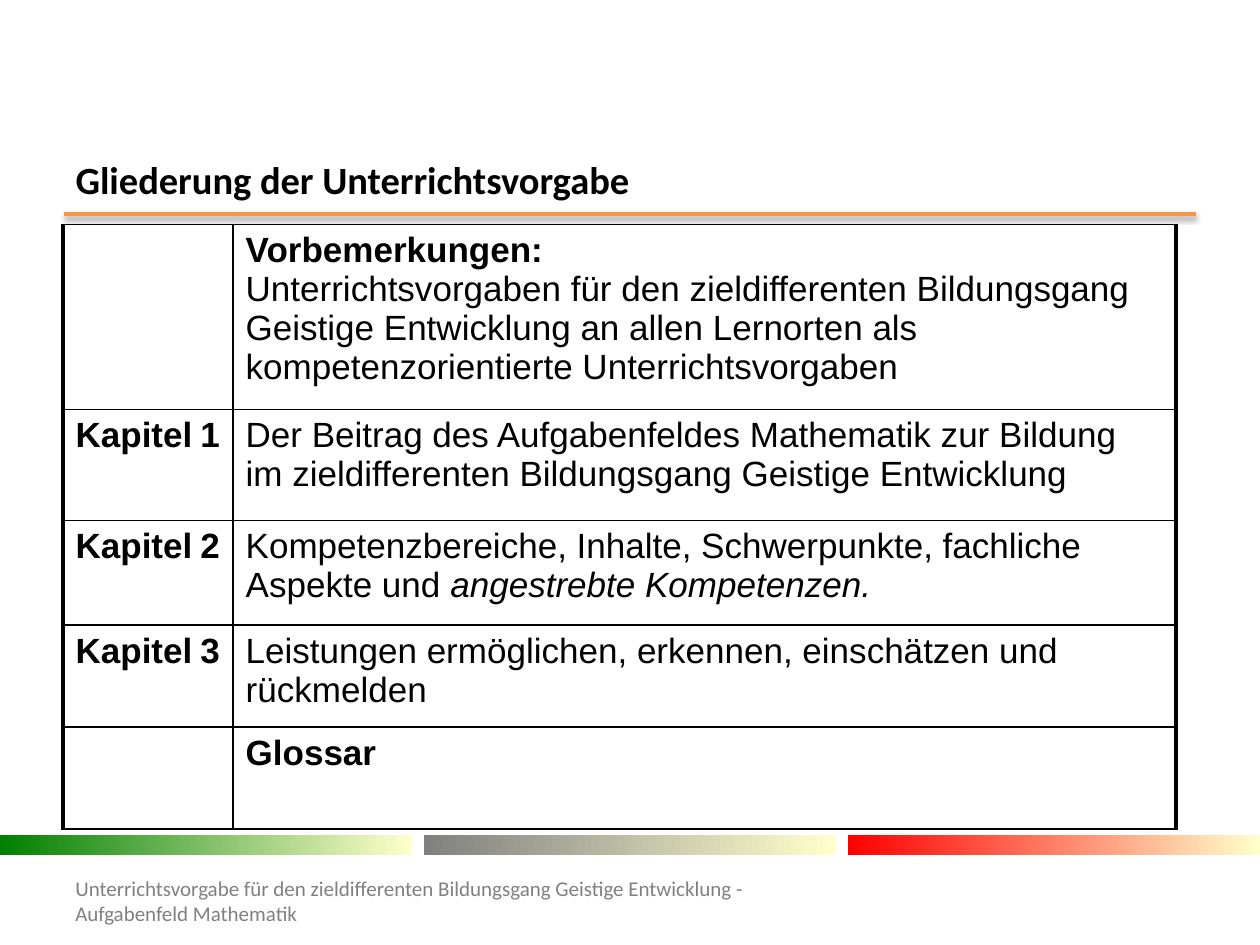
from dataclasses import dataclass

from lxml import etree
from pptx import Presentation
from pptx.dml.color import RGBColor
from pptx.enum import shapes, text
from pptx.oxml import ns
from pptx.util import Pt


@dataclass(frozen=True)
class Theme:
    """Colours, fonts and type sizes of the slide."""
    ink: str = "000000"
    muted: str = "808080"
    accent: str = "F79646"
    cream: str = "FFFFCC"
    bands: tuple = ("008000", "808080", "FF0000")
    heading_font: str = "Calibri"
    body_font: str = "Arial"
    title_size: float = 22
    body_size: float = 20
    gap_size: float = 16
    footer_size: float = 12
    thin: float = 1
    thick: float = 2.25


THEME = Theme()
CHAPTERS = [
    ("", [("Vorbemerkungen: \v", {"bold": True}),
          ("Unterrichtsvorgaben für den zieldifferenten Bildungsgang Geistige "
           "Entwicklung an allen Lernorten als kompetenzorientierte "
           "Unterrichtsvorgaben", {})]),
    ("1", [("Der Beitrag des Aufgabenfeldes Mathematik zur Bildung im "
            "zieldifferenten Bildungsgang Geistige Entwicklung", {})]),
    ("2", [("Kompetenzbereiche, Inhalte, Schwerpunkte, fachliche Aspekte und ", {}),
           ("angestrebte Kompetenzen.", {"italic": True})]),
    ("3", [("Leistungen ermöglichen, erkennen, einschätzen und rückmelden", {})]),
    ("", [("Glossar", {"bold": True})]),
]


def set_all(target, values):
    """Set every attribute named in values on target."""
    for name, value in values.items():
        setattr(target, name, value)


def add_run(paragraph, wording, font, size, color=THEME.ink, **style):
    """Append formatted text, with a line break where it ends in one."""
    run = paragraph.add_run()
    run.text = wording.rstrip("\v")
    set_all(run.font, {"name": font, "size": Pt(size), "bold": False, **style})
    run.font.color.rgb = RGBColor.from_string(color)
    if wording.endswith("\v"):
        paragraph.add_line_break()


def place(shape, box):
    """Move a shape to a box given in points."""
    set_all(shape, dict(zip(("left", "top", "width", "height"), map(Pt, box))))


def add_solid(parent, color):
    """Append a solid fill element and return its colour element."""
    fill = etree.SubElement(parent, ns.qn("a:solidFill"))
    return etree.SubElement(fill, ns.qn("a:srgbClr"), val=color)


def write_heading(shape, box, wording, size, color, bold):
    """Fill a single-paragraph box with heading-font text."""
    place(shape, box)
    frame = shape.text_frame
    set_all(frame, {"word_wrap": True, "auto_size": text.MSO_AUTO_SIZE.NONE,
                    "vertical_anchor": text.MSO_ANCHOR.MIDDLE})
    paragraph = frame.paragraphs[0]
    paragraph.alignment = text.PP_ALIGN.LEFT
    add_run(paragraph, wording, THEME.heading_font, size, color, bold=bold)


def add_title_rule(slide, box):
    """Draw the accent rule with a soft shadow along the top of the box."""
    left, top, width, _ = box
    rule = slide.shapes.add_connector(
        shapes.MSO_CONNECTOR.STRAIGHT, Pt(left), Pt(top), Pt(left + width), Pt(top))
    rule.line.color.rgb = RGBColor.from_string(THEME.accent)
    rule.line.width = Pt(2)
    effects = etree.SubElement(rule._element.spPr, ns.qn("a:effectLst"))
    shadow = etree.SubElement(
        effects, ns.qn("a:outerShdw"), blurRad=str(Pt(3.1)), dist=str(Pt(1.6)),
        dir="5400000", rotWithShape="0")
    tint = etree.SubElement(shadow, ns.qn("a:srgbClr"), val=THEME.ink)
    etree.SubElement(tint, ns.qn("a:alpha"), val="38000")


def add_bands(slide, box):
    """Spread the fading colour bands evenly over the box."""
    left, top, width, height = box
    band_width = 235.4
    step = (width - band_width) / (len(THEME.bands) - 1)
    for index, color in enumerate(THEME.bands):
        band = slide.shapes.add_shape(
            shapes.MSO_SHAPE.RECTANGLE, Pt(left + index * step), Pt(top),
            Pt(band_width), Pt(height))
        band.shadow.inherit = False
        band.line.fill.background()
        band.fill.gradient()
        band.fill.gradient_angle = 0
        for stop, shade in zip(band.fill.gradient_stops, (color, THEME.cream)):
            stop.color.rgb = RGBColor.from_string(shade)


def format_cell(cell, left_width, right_width):
    """Give a cell clear fill and black borders."""
    widths = {"L": left_width, "R": right_width, "T": THEME.thin, "B": THEME.thin}
    properties = cell._tc.get_or_add_tcPr()
    for side, width in widths.items():
        border = etree.SubElement(properties, ns.qn(f"a:ln{side}"), w=str(Pt(width)))
        add_solid(border, THEME.ink)
    cell.fill.background()


def add_outline_table(slide, box):
    """Build the table of chapters."""
    row_heights = (105.8, 63.4, 59.8, 58.3, 58.3)
    table = slide.shapes.add_table(len(CHAPTERS), 2, *map(Pt, box)).table
    set_all(table, {"first_row": False, "horz_banding": False})
    label_width = 97.2
    for column, width in zip(table.columns, (label_width, box[2] - label_width)):
        column.width = Pt(width)
    for row, height, (number, content) in zip(table.rows, row_heights, CHAPTERS):
        row.height = Pt(height)
        label, description = row.cells
        format_cell(label, THEME.thick, THEME.thin)
        format_cell(description, THEME.thin, THEME.thick)
        if number:
            for wording, size in (("Kapitel", THEME.body_size), (" ", THEME.gap_size),
                                  (number, THEME.body_size)):
                add_run(label.text_frame.paragraphs[0], wording,
                        THEME.body_font, size, bold=True)
        for wording, style in content:
            add_run(description.text_frame.paragraphs[0], wording,
                    THEME.body_font, THEME.body_size, **style)


def main():
    """Build and save the slide."""
    deck = Presentation()
    set_all(deck, {"slide_width": Pt(720), "slide_height": Pt(540)})
    slide = deck.slides.add_slide(deck.slide_layouts[5])
    add_title_rule(slide, (36.7, 122.4, 646.6, 0))
    add_bands(slide, (0, 477.3, 720, 11.5))
    write_heading(slide.shapes.title, (36, 88.5, 648, 28),
                  "Gliederung der Unterrichtsvorgabe",
                  THEME.title_size, THEME.ink, True)
    footer_box = (36, 500.4, 403.2, 28.8)
    write_heading(slide.shapes.add_textbox(*map(Pt, footer_box)), footer_box,
                  "Unterrichtsvorgabe für den zieldifferenten Bildungsgang "
                  "Geistige Entwicklung - Aufgabenfeld Mathematik",
                  THEME.footer_size, THEME.muted, False)
    add_outline_table(slide, (36, 128.2, 636, 345.6))
    deck.save("out.pptx")


if __name__ == "__main__":
    main()
